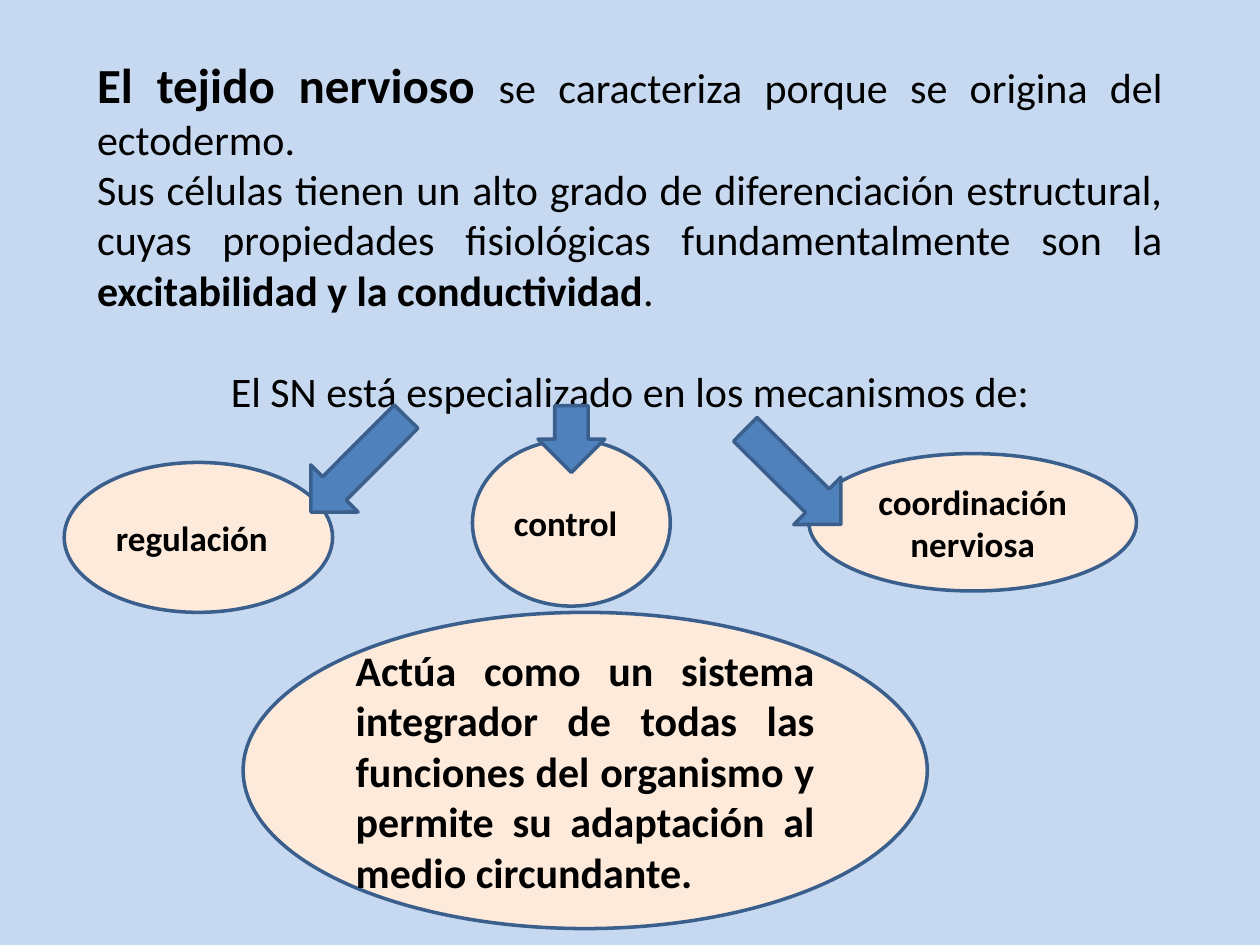
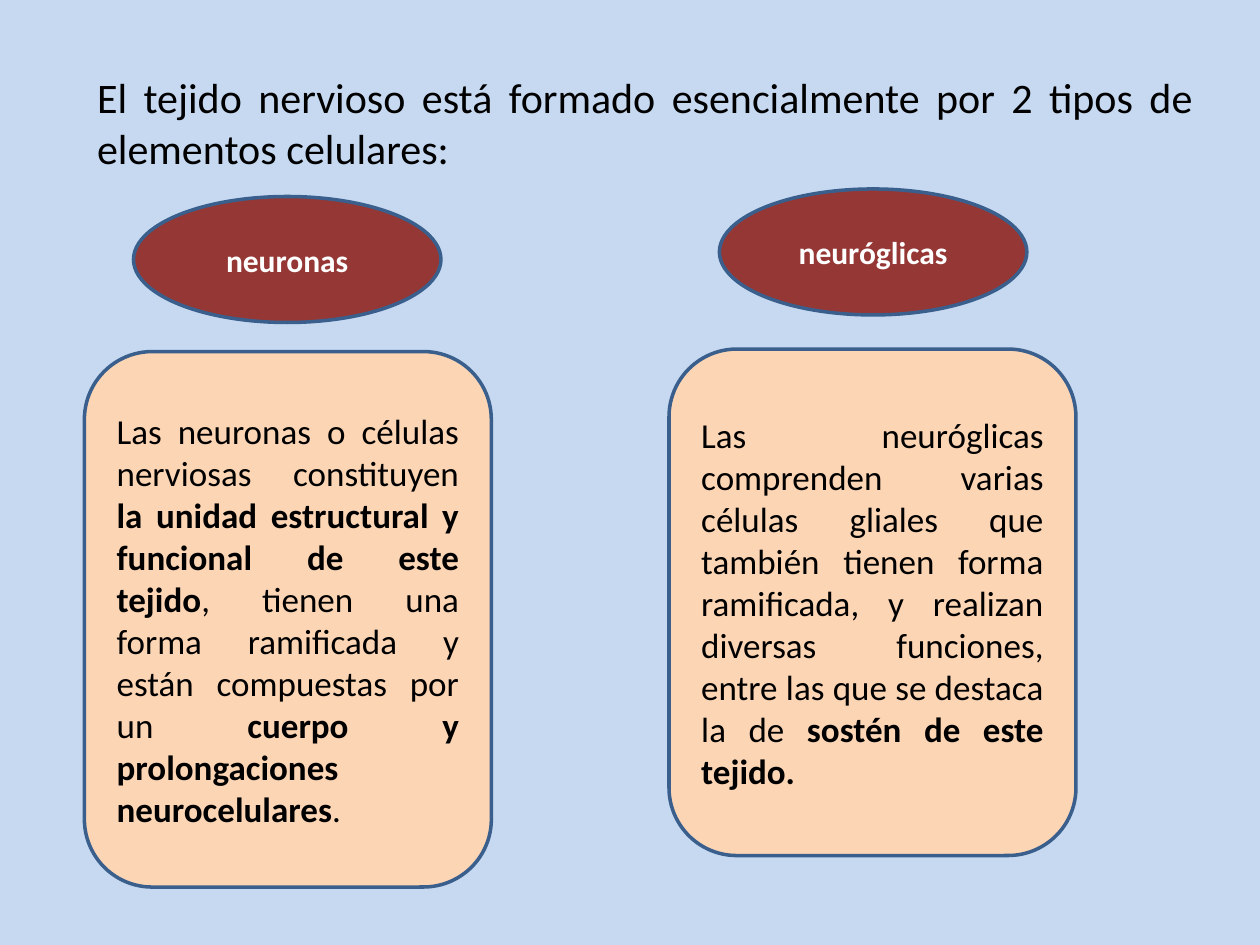
from pptx import Presentation
from pptx.dml.color import RGBColor
from pptx.enum import shapes, text
from pptx.util import Inches, Pt

HUES = {"back": "C6D9F1", "edge": "3A5F8C", "cream": "FDEADA",
        "peach": "FCD5B5", "wine": "953735", "blue": "4F81BD",
        "ink": "000000", "white": "FFFFFF"}
KINDS = shapes.MSO_SHAPE
MID, JUST = text.PP_ALIGN.CENTER, text.PP_ALIGN.JUSTIFY
BOLD = {"bold": True}


class Deck:
    """Holds the shared style and the current slide."""

    def __init__(self):
        self.prs = Presentation()
        self.prs.slide_width, self.prs.slide_height = Inches(10), Inches(7.5)

    def hue(self, name):
        return RGBColor.from_string(HUES[name])

    def page(self):
        # Layout 5 has a title only
        self.slide = self.prs.slides.add_slide(self.prs.slide_layouts[5])
        fill = self.slide.background.fill
        fill.solid()
        fill.fore_color.rgb = self.hue("back")

    def put(self, para, runs, align, size, color="ink"):
        """Fill a paragraph from (words, format) pairs."""
        para.alignment = align
        look = {"name": "Calibri", "size": Pt(size), "bold": False}
        for words, extra in runs:
            run = para.add_run()
            run.text = words
            for key, value in {**look, **extra}.items():
                setattr(run.font, key, value)
            run.font.color.rgb = self.hue(color)

    def lead(self, spot, *paras):
        """Put the opening text in the title; each item is (runs, align, gap)."""
        box = self.slide.shapes.title
        box.left, box.top, box.width, box.height = map(Inches, spot)
        frame = box.text_frame
        form = {"word_wrap": True, "auto_size": text.MSO_AUTO_SIZE.NONE,
                "vertical_anchor": text.MSO_ANCHOR.TOP}
        for key, value in form.items():
            setattr(frame, key, value)
        for i, (runs, align, gap) in enumerate(paras):
            para = frame.add_paragraph() if i else frame.paragraphs[0]
            para.space_before = Pt(gap)
            self.put(para, runs, align, 24)

    def shape(self, kind, spot, fill):
        item = self.slide.shapes.add_shape(kind, *map(Inches, spot))
        item.shadow.inherit = False
        item.fill.solid()
        item.fill.fore_color.rgb = self.hue(fill)
        item.line.color.rgb = self.hue("edge")
        item.line.width = Pt(2)
        return item

    def label(self, kind, spot, fill, runs, align, size, color="ink"):
        frame = self.shape(kind, spot, fill).text_frame
        frame.word_wrap = True
        frame.vertical_anchor = text.MSO_ANCHOR.MIDDLE
        self.put(frame.paragraphs[0], runs, align, size, color)

    def arrow(self, spot, turn):
        self.shape(KINDS.RIGHT_ARROW, spot, "blue").rotation = turn


def roles(deck):
    deck.page()
    # Opening text
    deck.lead(
        (0.67, 0.38, 8.66, 3),
        ([("El tejido nervioso ", {"size": Pt(28), "bold": True}),
          ("se caracteriza porque se origina del ectodermo.", {})], JUST, 0),
        ([("Sus células tienen un alto grado de diferenciación estructural, "
           "cuyas propiedades fisiológicas fundamentalmente son la ", {}),
          ("excitabilidad y la conductividad", BOLD), (".", {})], JUST, 0),
        ([("El SN está especializado en los mecanismos de:", {})], MID, 29))

    # Summary and the three mechanisms
    for spot, words, align, size in (
            ((1.93, 4.86, 5.43, 2.51),
             "Actúa como un sistema integrador de todas las funciones del "
             "organismo y permite su adaptación al medio circundante.",
             JUST, 24),
            ((0.51, 3.67, 2.13, 1.19), "regulación", JUST, 20),
            ((3.75, 3.49, 1.57, 1.32), "control", JUST, 20),
            ((6.42, 3.6, 2.6, 1.09), "coordinación nerviosa", MID, 20)):
        deck.label(KINDS.OVAL, spot, "cream", [(words, BOLD)], align, size)

    # Arrows to the mechanisms
    for left, top, width, turn in ((4.27, 3.22, 0.53, 90),
                                   (2.31, 3.42, 1.07, 134.9),
                                   (5.76, 3.52, 1.07, 44.8)):
        deck.arrow((left, top, width, 0.53), turn)


def cells(deck):
    deck.page()
    # Opening text
    deck.lead(
        (0.67, 0.52, 8.9, 0.95),
        ([("El tejido nervioso está formado esencialmente por 2 tipos de "
           "elementos celulares:", {})], JUST, 0))

    # Cell names
    for left, top, name in ((1.06, 1.56, "neuronas"),
                            (5.71, 1.5, "neuróglicas")):
        deck.label(KINDS.OVAL, (left, top, 2.44, 1), "wine",
                   [(name, BOLD)], MID, 18, "white")

    # Cell descriptions
    nerve = [("Las neuronas o células nerviosas constituyen ", {}),
             ("la unidad estructural y funcional de este tejido", BOLD),
             (", tienen una forma ramificada y están compuestas por un ", {}),
             ("cuerpo y prolongaciones neurocelulares", BOLD), (".", {})]
    glia = [("Las neuróglicas comprenden varias células gliales que también "
             "tienen forma ramificada, y realizan diversas funciones, entre "
             "las que se destaca la de ", {}),
            ("sostén de este tejido.", BOLD)]
    for left, top, height, runs in ((0.67, 2.79, 4.25, nerve),
                                    (5.31, 2.77, 4.02, glia)):
        deck.label(KINDS.ROUNDED_RECTANGLE, (left, top, 3.23, height),
                   "peach", runs, JUST, 20)


def main():
    deck = Deck()
    roles(deck)
    cells(deck)
    deck.prs.save("out.pptx")


if __name__ == "__main__":
    main()
